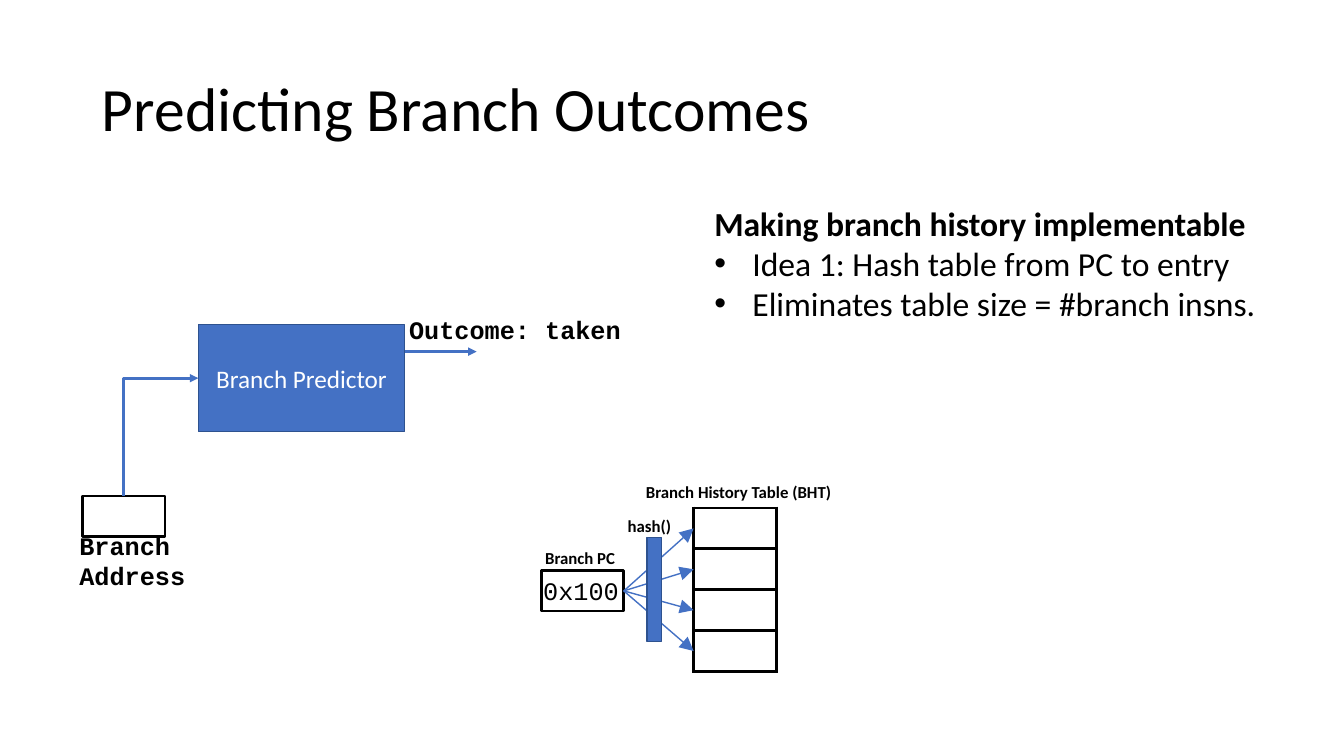
"""Build the slide on predicting branch outcomes with a hashed branch history table."""
from dataclasses import dataclass

from pptx import Presentation
from pptx.dml.color import RGBColor as RGB
from pptx.enum.shapes import MSO_CONNECTOR as Connector, MSO_SHAPE as Shape
from pptx.enum.text import MSO_ANCHOR as Anchor, MSO_AUTO_SIZE as AutoSize, PP_ALIGN as Align
from pptx.oxml.ns import qn
from pptx.oxml.xmlchemy import OxmlElement
from pptx.util import Cm, Pt

TOP, LEFT, RIGHT = 0, 1, 3


@dataclass(frozen=True)
class Theme:
    """Colours, fonts and type sizes of the slide."""
    ink: RGB = RGB(0, 0, 0)
    paper: RGB = RGB(255, 255, 255)
    accent: RGB = RGB(0x44, 0x71, 0xC4)
    edge: RGB = RGB(0x2E, 0x52, 0x8F)
    sans: str = "Calibri"
    mono: str = "Courier New"
    title: int = 44
    body: int = 24
    label: int = 18
    caption: int = 12


class Board:
    """The current slide and the style in which its elements are drawn."""

    def __init__(self, slide, theme):
        self.slide, self.shapes, self.theme = slide, slide.shapes, theme

    def place(self, holder, left, top, width, height):
        holder.left, holder.top = Cm(left), Cm(top)
        holder.width, holder.height = Cm(width), Cm(height)

    def frame(self, holder, anchor=Anchor.TOP, wrap=True, inset=0):
        frame = holder.text_frame
        frame.auto_size, frame.word_wrap = AutoSize.NONE, wrap
        frame.vertical_anchor = anchor
        frame.margin_left = Cm(inset)
        frame.margin_right = frame.margin_top = frame.margin_bottom = 0
        return frame

    def style(self, paragraph, size, face=None, color=None, bold=False, align=Align.LEFT):
        font = paragraph.font
        font.size, font.name, font.bold = Pt(size), face or self.theme.sans, bold
        font.color.rgb = color or self.theme.ink
        paragraph.alignment, paragraph.space_before = align, Pt(0)

    def title(self, text, *area):
        heading = self.shapes.title
        self.place(heading, *area)
        frame = self.frame(heading)
        frame.text = text
        self.style(frame.paragraphs[0], self.theme.title)

    def points(self, heading, ideas, *area):
        body = self.slide.placeholders[1]
        self.place(body, *area)
        frame = self.frame(body)
        frame.text = "\n".join([heading, *ideas])
        for row, paragraph in enumerate(frame.paragraphs):
            self.style(paragraph, self.theme.body, bold=row == 0)
            props = paragraph._p.get_or_add_pPr()
            props.set("marL", str(Cm(0.96 if row else 0)))
            props.set("indent", str(Cm(-0.96 if row else 0)))
            bullet = OxmlElement("a:buChar" if row else "a:buNone")
            if row:
                bullet.set("char", "•")
            props.append(bullet)

    def label(self, text, left, top, width, size, face=None, lines=1):
        box = self.shapes.add_textbox(Cm(left), Cm(top), Cm(width), Pt(size * 1.25 * lines))
        frame = self.frame(box, wrap=lines > 1)
        frame.text = text
        self.style(frame.paragraphs[0], size, face, bold=True)

    def box(self, left, top, width, height, filled=False):
        box = self.shapes.add_shape(Shape.RECTANGLE, Cm(left), Cm(top), Cm(width), Cm(height))
        box.shadow.inherit = False
        if filled:
            box.fill.solid()
            box.fill.fore_color.rgb = self.theme.accent
        else:
            box.fill.background()
        box.line.color.rgb = self.theme.edge if filled else self.theme.ink
        box.line.width = Pt(1 if filled else 2)
        return box

    def caption(self, box, text, color, face=None, align=Align.LEFT, inset=0):
        frame = self.frame(box, Anchor.MIDDLE, wrap=False, inset=inset)
        frame.text = text
        self.style(frame.paragraphs[0], self.theme.label, face, color, align=align)

    def arrow(self, start, end, weight, kind=Connector.STRAIGHT, tip="tailEnd", size="med"):
        link = self.shapes.add_connector(kind, *(Cm(n) for n in (*start, *end)))
        link.line.color.rgb, link.line.width = self.theme.accent, Pt(weight)
        props = link.element.spPr
        head = OxmlElement(f"a:{tip}")
        for key, value in (("type", "triangle"), ("w", size), ("len", size)):
            head.set(key, value)
        props.find(qn("a:ln")).append(head)
        props.append(OxmlElement("a:effectLst"))
        return link

    def corner_arrow(self, source, source_side, target, target_side):
        link = self.arrow((0, 0), (1, 1), 2, Connector.ELBOW, "headEnd")
        link.begin_connect(target, target_side)
        link.end_connect(source, source_side)
        link.element.spPr.find(qn("a:prstGeom")).set("prst", "bentConnector2")

    def column(self, left, top, width, row_height, rows):
        table = self.shapes.add_table(
            rows, 1, Cm(left), Cm(top), Cm(width), Cm(row_height * rows)).table
        table.first_row = table.horz_banding = False
        for row in table.rows:
            row.height = Cm(row_height)
            cell = row.cells[0]
            cell.margin_top = cell.margin_bottom = 0
            cell.fill.background()
            self.style(cell.text_frame.paragraphs[0], self.theme.caption)
            props = cell._tc.get_or_add_tcPr()
            for place, side in enumerate("LRTB"):
                border = OxmlElement(f"a:ln{side}")
                border.set("w", str(Pt(2.25)))
                paint, tone = OxmlElement("a:solidFill"), OxmlElement("a:srgbClr")
                tone.set("val", str(self.theme.ink))
                paint.append(tone)
                border.append(paint)
                props.insert(place, border)


def main():
    deck = Presentation()
    deck.slide_width, deck.slide_height = Cm(33.87), Cm(19.05)
    theme = Theme()
    board = Board(deck.slides.add_slide(deck.slide_layouts[1]), theme)

    board.title("Predicting Branch Outcomes", 2.57, 1.77, 30, 1.9)
    board.points("Making branch history implementable",
                 ["Idea 1: Hash table from PC to entry",
                  "Eliminates table size = #branch insns."], 18, 5.1, 14.4, 3.2)

    predictor = board.box(5, 8.18, 5.2, 2.7, filled=True)
    board.caption(predictor, "Branch Predictor", theme.paper, align=Align.CENTER)
    address = board.box(2.08, 12.5, 2.08, 1.02)
    board.corner_arrow(address, TOP, predictor, LEFT)
    board.arrow((10.2, 8.86), (12.01, 8.86), 2)
    board.label("Branch Address", 2, 13.36, 2.8, theme.label, theme.mono, lines=2)
    board.label("Outcome: taken", 10.31, 7.92, 5.4, theme.label, theme.mono)

    entries, entry_height, table_left, table_top = 4, 1.03, 17.48, 12.8
    board.column(table_left, table_top, 2.08, entry_height, entries)
    pc = board.box(13.64, 14.38, 2.08, 1.02)
    board.caption(pc, "0x100", theme.ink, theme.mono, inset=0.05)
    for entry in range(entries):
        middle = table_top + (entry + 0.5) * entry_height
        probe = board.arrow((15.72, 14.89), (table_left, middle), 1, size="lg")
        probe.begin_connect(pc, RIGHT)
    board.box(16.31, 13.54, 0.36, 2.62, filled=True)

    board.label("Branch History Table (BHT)", 16.28, 12.14, 4.75, theme.caption)
    board.label("hash()", 15.82, 13, 1.2, theme.caption)
    board.label("Branch PC", 13.74, 13.79, 1.85, theme.caption)
    deck.save("out.pptx")


if __name__ == "__main__":
    main()
